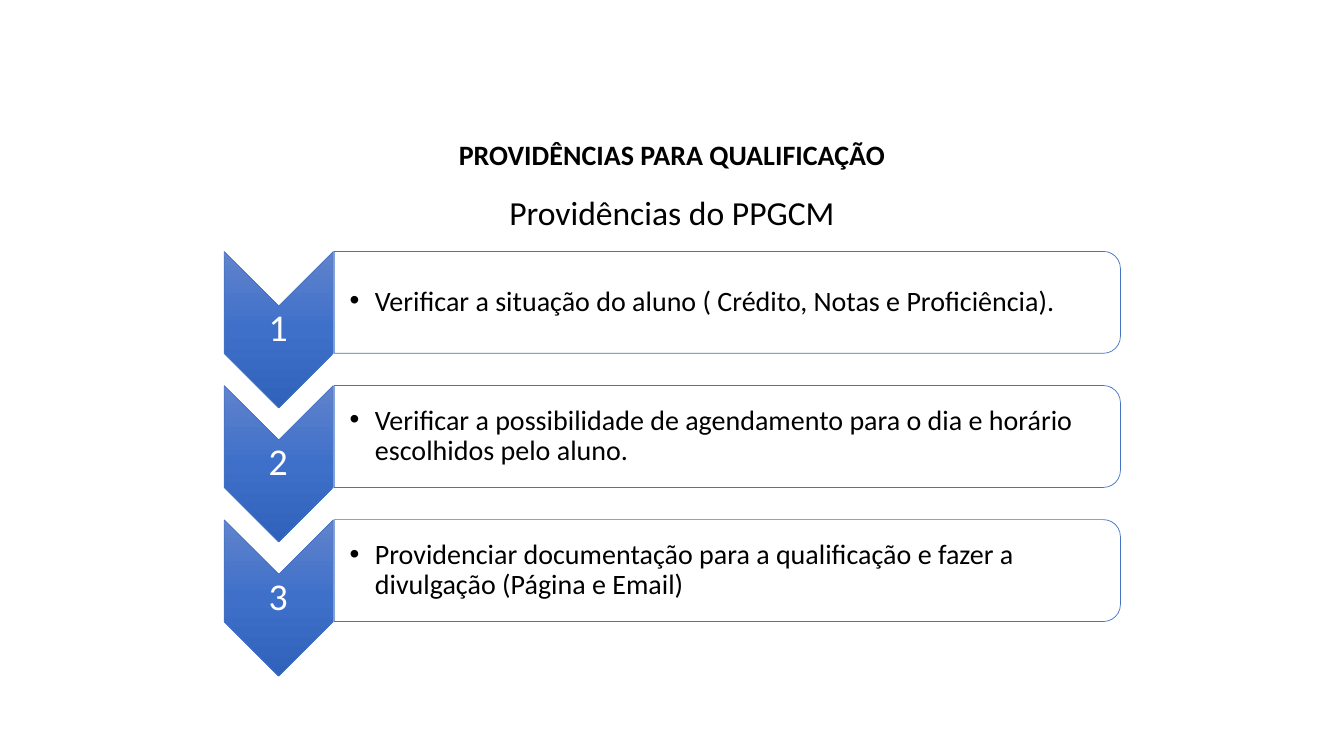
from dataclasses import dataclass

from lxml import etree
from pptx import Presentation
from pptx.dml.color import RGBColor
from pptx.enum.shapes import MSO_SHAPE as Preset
from pptx.enum.text import MSO_ANCHOR as Anchor, PP_ALIGN as Align
from pptx.oxml import parse_xml
from pptx.oxml.ns import nsdecls, qn
from pptx.util import Pt

COLORS = {
    "text": "000000",
    "number": "FFFFFF",
    "bar": "FFFFFF",
    "outline": "4472C4",
    "gradient_top": "6183CB",
    "gradient_middle": "3E70CA",
    "gradient_bottom": "3062BB",
}
FONT = "Calibri"
STEP_PITCH = 95.8


@dataclass(frozen=True)
class Box:
    left: float
    top: float
    width: float
    height: float

    def lengths(self, down: float = 0) -> tuple:
        return Pt(self.left), Pt(self.top + down), Pt(self.width), Pt(self.height)


@dataclass(frozen=True)
class TextStyle:
    size: float
    color: str = "text"
    bold: bool = False
    align: Align = Align.CENTER
    anchor: Anchor = Anchor.MIDDLE
    margins: tuple = (7.2, 3.6, 7.2, 3.6)
    bullet_indent: float = 0


TITLE_BOX = Box(120, 88.6, 720, 37.4)
SUBTITLE_BOX = Box(120, 136.8, 720, 367.2)
# The chevron and the bar are given before their quarter turn.
CHEVRON_BOX = Box(143.3, 196.6, 111.6, 77.8)
BAR_BOX = Box(483.1, -64.8, 72.8, 561.6)
NUMBER_BOX = Box(159.8, 218.9, 77.8, 33.1)
DETAIL_BOX = Box(238.3, 182.9, 558, 65.5)

TITLE_STYLE = TextStyle(20, bold=True, anchor=Anchor.BOTTOM)
SUBTITLE_STYLE = TextStyle(24, anchor=Anchor.TOP)
NUMBER_STYLE = TextStyle(27, "number", margins=(1.4, 1.4, 1.4, 1.4))
DETAIL_STYLE = TextStyle(20, align=Align.LEFT, margins=(11.5, 0.9, 0.9, 0.9),
                         bullet_indent=18)

STEPS = (
    "Verificar a situação do aluno ( Crédito, Notas e Proficiência).",
    "Verificar a possibilidade de agendamento para o dia e horário escolhidos pelo aluno.",
    "Providenciar documentação para a qualificação e fazer a divulgação (Página e Email)",
)


def rgb(name: str) -> RGBColor:
    return RGBColor.from_string(COLORS[name])


def write_text(shape, text: str, style: TextStyle) -> None:
    frame = shape.text_frame
    frame.text = text
    frame.word_wrap = True
    frame.vertical_anchor = style.anchor
    (frame.margin_left, frame.margin_top,
     frame.margin_right, frame.margin_bottom) = map(Pt, style.margins)
    paragraph = frame.paragraphs[0]
    paragraph.alignment = style.align
    paragraph.line_spacing = 0.9
    paragraph.space_before = Pt(0)
    if style.bullet_indent:
        properties = paragraph._p.get_or_add_pPr()
        properties.set("marL", str(Pt(style.bullet_indent)))
        properties.set("indent", str(-Pt(style.bullet_indent)))
        etree.SubElement(properties, qn("a:buFont"), typeface="Arial")
        etree.SubElement(properties, qn("a:buChar"), char="•")
    font = paragraph.runs[0].font
    font.name = FONT
    font.size = Pt(style.size)
    font.bold = style.bold
    font.color.rgb = rgb(style.color)


def add_text(slide, box: Box, text: str, style: TextStyle, down: float = 0) -> None:
    write_text(slide.shapes.add_textbox(*box.lengths(down)), text, style)


def add_turned_shape(slide, preset: Preset, box: Box, down: float):
    """Add an outlined shape turned a quarter clockwise."""
    shape = slide.shapes.add_shape(preset, *box.lengths(down))
    shape.rotation = 90
    shape.shadow.inherit = False
    shape.line.color.rgb = rgb("outline")
    shape.line.width = Pt(0.5)
    return shape


def fill_with_gradient(shape) -> None:
    """Shade from top to bottom, whatever the rotation of the shape."""
    names = ("gradient_top", "gradient_middle", "gradient_bottom")
    stops = "".join(
        f'<a:gs pos="{index * 50000}"><a:srgbClr val="{COLORS[name]}"/></a:gs>'
        for index, name in enumerate(names)
    )
    shape.fill.gradient()
    properties = shape._element.spPr
    properties.replace(properties.find(qn("a:gradFill")), parse_xml(
        f'<a:gradFill {nsdecls("a")} rotWithShape="0"><a:gsLst>{stops}</a:gsLst>'
        '<a:lin ang="5400000" scaled="0"/></a:gradFill>'
    ))


def add_step(slide, index: int, detail: str) -> None:
    down = index * STEP_PITCH
    chevron = add_turned_shape(slide, Preset.CHEVRON, CHEVRON_BOX, down)
    fill_with_gradient(chevron)
    add_text(slide, NUMBER_BOX, str(index + 1), NUMBER_STYLE, down)

    bar = add_turned_shape(slide, Preset.ROUND_2_SAME_RECTANGLE, BAR_BOX, down)
    bar.fill.solid()
    bar.fill.fore_color.rgb = rgb("bar")
    color = bar._element.spPr.find(qn("a:solidFill")).find(qn("a:srgbClr"))
    etree.SubElement(color, qn("a:alpha"), val="90000")
    add_text(slide, DETAIL_BOX, detail, DETAIL_STYLE, down)


def main() -> None:
    presentation = Presentation()
    presentation.slide_width, presentation.slide_height = Pt(960), Pt(540)
    slide = presentation.slides.add_slide(presentation.slide_layouts[5])

    title = slide.shapes.title
    title.left, title.top, title.width, title.height = TITLE_BOX.lengths()
    write_text(title, "PROVIDÊNCIAS PARA QUALIFICAÇÃO", TITLE_STYLE)
    add_text(slide, SUBTITLE_BOX, "Providências do PPGCM", SUBTITLE_STYLE)

    for index, detail in enumerate(STEPS):
        add_step(slide, index, detail)
    presentation.save("out.pptx")


if __name__ == "__main__":
    main()
